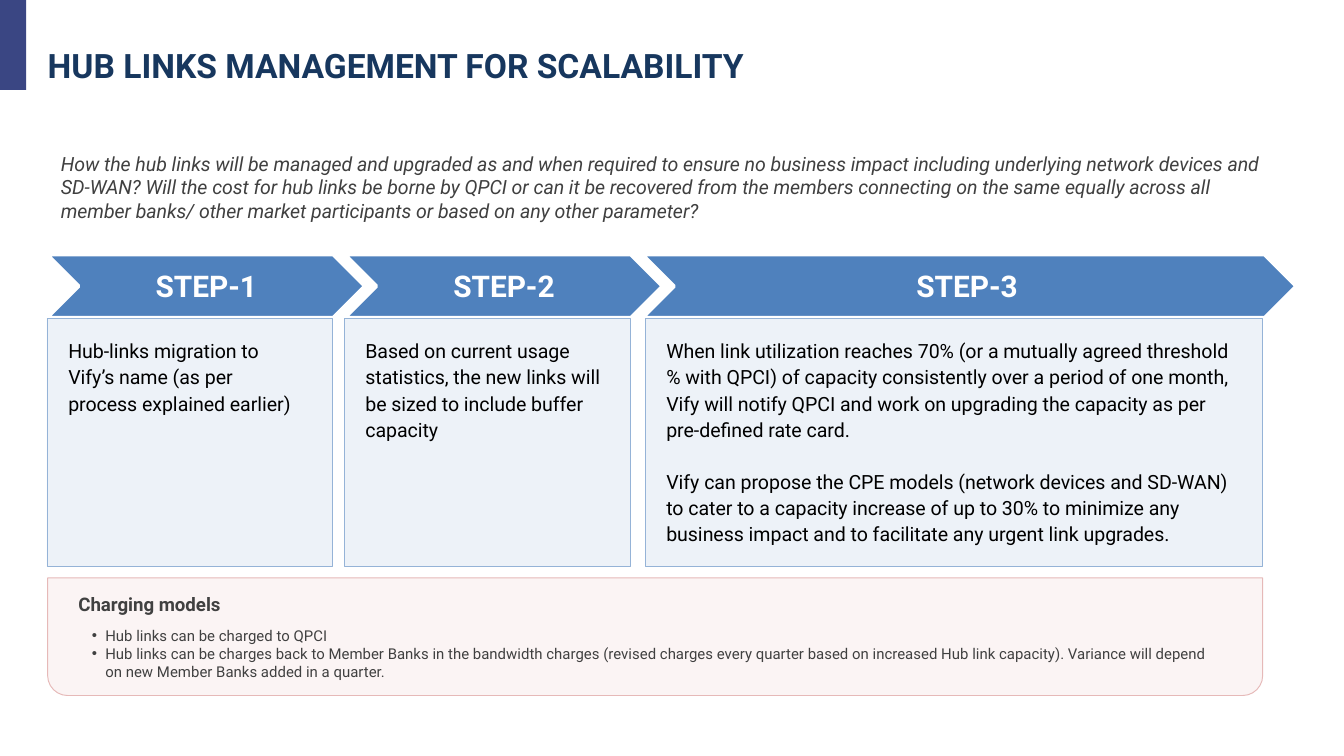
from pptx import Presentation
from pptx.dml.color import RGBColor
from pptx.enum.shapes import MSO_SHAPE
from pptx.enum.text import MSO_ANCHOR, MSO_AUTO_SIZE, PP_ALIGN
from pptx.oxml.ns import qn
from pptx.util import Pt
from lxml import etree

RECTANGLE = MSO_SHAPE.RECTANGLE
CHEVRON = MSO_SHAPE.CHEVRON
ROUNDED_PAIR = MSO_SHAPE.ROUND_2_SAME_RECTANGLE
LEFT, CENTER = PP_ALIGN.LEFT, PP_ALIGN.CENTER
MIDDLE = MSO_ANCHOR.MIDDLE
NO_AUTOFIT = MSO_AUTO_SIZE.NONE

EMU_PER_PX = 4572  # 200 px to the inch
TITLE_ONLY = 5

NAVY, INDIGO, BLUE = "17375E", "3A4683", "4F81BD"
PALE_BLUE, EDGE_BLUE = "DCE6F2", "95B3D7"
PALE_RED, EDGE_RED = "F2DCDB", "E6B9B8"
WHITE, GREY, BLACK = "FFFFFF", "404040", "000000"

QUESTION = (
    "How the hub links will be managed and upgraded as and when required to ensure no business "
    "impact including underlying network devices and SD-WAN? Will the cost for hub links be borne "
    "by QPCI or can it be recovered from the members connecting on the same equally across all "
    "member banks/ other market participants or based on any other parameter?"
)

# Left and width of the arrow, label, panel and panel text, then the text
STEPS = [
    ((70, 473), (118, 378), (70, 425), (82, 392),
     ["Hub-links migration to Vify’s name (as per process explained earlier)"]),
    ((513, 473), (562, 376), (513, 425), (524, 396),
     ["Based on current usage statistics, the new links will be sized to include buffer capacity"]),
    ((956, 973), (1000, 878), (960, 918), (972, 894),
     ["When link utilization reaches 70% (or a mutually agreed threshold % with QPCI) of capacity "
      "consistently over a period of one month, Vify will notify QPCI and work on upgrading the "
      "capacity as per pre-defined rate card.",
      "Vify can propose the CPE models (network devices and SD-WAN) to cater to a capacity "
      "increase of up to 30% to minimize any business impact and to facilitate any urgent link "
      "upgrades."]),
]

CHARGING_MODELS = [
    "Hub links can be charged to QPCI",
    "Hub links can be charges back to Member Banks in the bandwidth charges (revised charges every "
    "quarter based on increased Hub link capacity). Variance will depend on new Member Banks added "
    "in a quarter.",
]


def px(length):
    return length * EMU_PER_PX


def color(hex_code):
    return RGBColor.from_string(hex_code)


class SlideBuilder:
    """Holds the text style and the slide being filled."""

    font_name = "Roboto"

    def __init__(self, page):
        self.page = page

    def style(self, para, size, hex_code, bold=False, italic=False):
        for span in para.runs:
            span.font.name = self.font_name
            span.font.size = Pt(size)
            span.font.bold = bold
            span.font.italic = italic
            span.font.color.rgb = color(hex_code)

    def title(self, text, left, top, width, height):
        box = self.page.shapes.title
        box.left, box.top, box.width, box.height = map(px, (left, top, width, height))
        frame = box.text_frame
        frame.text = text
        frame.auto_size = NO_AUTOFIT
        frame.vertical_anchor = MIDDLE
        frame.margin_left = 0
        frame.paragraphs[0].alignment = LEFT
        self.style(frame.paragraphs[0], 18, NAVY, bold=True)

    def shape(self, kind, left, top, width, height, fill, line=None, line_width=0.5, opacity=100):
        shape = self.page.shapes.add_shape(kind, *map(px, (left, top, width, height)))
        shape.shadow.inherit = False
        shape.fill.solid()
        shape.fill.fore_color.rgb = color(fill)
        if opacity < 100:
            fill_color = shape._element.spPr.find(qn("a:solidFill")).find(qn("a:srgbClr"))
            etree.SubElement(fill_color, qn("a:alpha"), val=str(opacity * 1000))
        if line:
            shape.line.color.rgb = color(line)
            shape.line.width = Pt(line_width)
        else:
            shape.line.fill.background()
        return shape

    def text(self, texts, left, top, width, height, size, hex_code, bold=False, italic=False,
             align=LEFT, line_spacing=None):
        """Add a text box; paragraphs after the first stand one line apart."""
        box = self.page.shapes.add_textbox(*map(px, (left, top, width, height)))
        frame = box.text_frame
        frame.word_wrap = True
        frame.text = "\n".join(texts)
        for index, para in enumerate(frame.paragraphs):
            para.alignment = align
            if line_spacing:
                para.line_spacing = Pt(line_spacing)
                if index:
                    para.space_before = Pt(line_spacing)
            self.style(para, size, hex_code, bold, italic)
        return frame

    def bullet(self, frame, text, size, hex_code):
        para = frame.add_paragraph()
        para.text = text
        para.level = 1
        properties = para._p.get_or_add_pPr()
        properties.set("marL", str(px(40)))
        properties.set("indent", str(px(-20)))
        etree.SubElement(properties, qn("a:buFont"), typeface="Arial")
        etree.SubElement(properties, qn("a:buChar"), char="•")
        self.style(para, size, hex_code)


def main():
    deck = Presentation()
    deck.slide_width, deck.slide_height = px(2000), px(1125)
    builder = SlideBuilder(deck.slides.add_slide(deck.slide_layouts[TITLE_ONLY]))

    builder.shape(RECTANGLE, 0, 0, 39, 134, INDIGO)
    builder.title("HUB LINKS MANAGEMENT FOR SCALABILITY", 71, 57, 1648, 80)
    builder.text([QUESTION], 71, 216, 1858, 126, 10.5, GREY, italic=True)

    for (left, width), *_ in STEPS:
        builder.shape(CHEVRON, left, 379, width, 94, BLUE, WHITE, 2)
    for number, (_, label, panel, body, texts) in enumerate(STEPS, start=1):
        builder.text([f"STEP-{number}"], label[0], 388, label[1], 74, 16, WHITE,
                     bold=True, align=CENTER)
        builder.shape(RECTANGLE, panel[0], 474, panel[1], 369, PALE_BLUE, EDGE_BLUE, opacity=50)
        height = 332 if len(texts) > 1 else 174
        builder.text(texts, body[0], 491, body[1], height, 10.5, BLACK, line_spacing=14)

    charges = builder.shape(ROUNDED_PAIR, 71, 860, 1808, 175, PALE_RED, EDGE_RED, opacity=30)
    charges.adjustments[0], charges.adjustments[1] = 0, 0.17
    frame = builder.text(["Charging models"], 97, 873, 1744, 152, 10, GREY, bold=True)
    frame.paragraphs[0].space_after = Pt(6)
    for model in CHARGING_MODELS:
        builder.bullet(frame, model, 8, GREY)

    deck.save("out.pptx")


if __name__ == "__main__":
    main()
